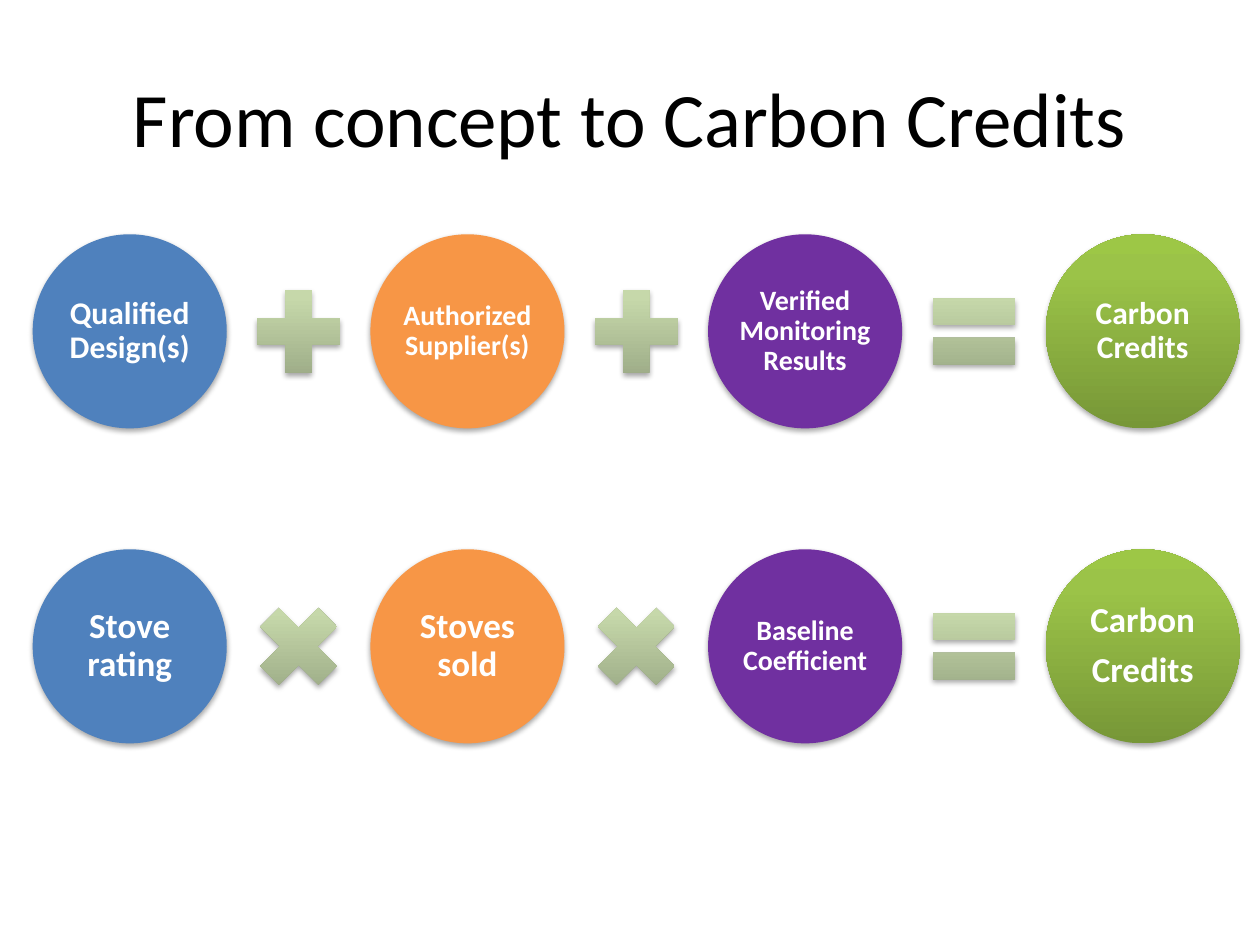
from copy import deepcopy
from lxml import etree
from pptx import Presentation, util as u
from pptx.dml.color import RGBColor
from pptx.enum import shapes, text
from pptx.oxml.ns import qn

SHAPE = shapes.MSO_SHAPE
PLUS, TIMES, EQUAL = SHAPE.MATH_PLUS, SHAPE.MATH_MULTIPLY, SHAPE.MATH_EQUAL

TITLE = "From concept to Carbon Credits"
EQUATIONS = [
    ([("Qualified Design(s)", 18), ("Authorized Supplier(s)", 16),
      ("Verified Monitoring Results", 16), ("Carbon Credits", 18)],
     [PLUS, PLUS, EQUAL]),
    ([("Stove rating", 20), ("Stoves sold", 20),
      ("Baseline Coefficient", 16), ("Carbon\nCredits", 20)],
     [TIMES, TIMES, EQUAL]),
]

THEME = {
    "font": "Calibri",
    "title_size": 44,
    "title": "000000",
    "label": "FFFFFF",
    "terms": ["4F81BD", "F79646", "7030A0",
              [(0, "779737"), (0.8, "9BC348"), (1, "9DC746")]],
    "operator": [(0, "98A683"), (0.8, "C6D8AA"), (1, "C7DAAA")],
    "shadow": {"blurRad": "40000", "dist": "23000", "dir": "5400000", "rotWithShape": "0"},
    "shadow_color": "000000",
    "shadow_alpha": "35000",
}

WIDTH, HEIGHT = 10, 7.5
FIRST_X, COLUMN = 1.03, 2.68
FIRST_Y, ROW = 2.63, HEIGHT / 3
CIRCLE, OPERATOR = 1.54, 0.89


def paint(sp, fill):
    if isinstance(fill, str):
        sp.fill.solid()
        sp.fill.fore_color.rgb = RGBColor.from_string(fill)
        return
    sp.fill.gradient()
    sp.fill.gradient_angle = 90
    stops = sp._element.spPr.find(".//" + qn("a:gsLst"))
    stops.append(deepcopy(stops[-1]))
    for stop, (position, color) in zip(sp.fill.gradient_stops, fill):
        stop.position = position
        stop.color.rgb = RGBColor.from_string(color)


def cast_shadow(sp):
    sp.shadow.inherit = False
    effects = sp._element.spPr.find(qn("a:effectLst"))
    shadow = etree.SubElement(effects, qn("a:outerShdw"), THEME["shadow"])
    color = etree.SubElement(shadow, qn("a:srgbClr"), val=THEME["shadow_color"])
    etree.SubElement(color, qn("a:alpha"), val=THEME["shadow_alpha"])


def add_centred(group, kind, x, y, size, fill):
    sp = group.shapes.add_shape(kind, u.Inches(x - size / 2), u.Inches(y - size / 2),
                                u.Inches(size), u.Inches(size))
    paint(sp, fill)
    sp.line.fill.background()
    cast_shadow(sp)
    return sp


def write(tf, content, size, color, bold=False):
    tf.text = content
    tf.word_wrap = True
    tf.vertical_anchor = text.MSO_ANCHOR.MIDDLE
    for p in tf.paragraphs:
        p.alignment = text.PP_ALIGN.CENTER
        for r in p.runs:
            r.font.name = THEME["font"]
            r.font.size = u.Pt(size)
            r.font.bold = bold
            r.font.color.rgb = RGBColor.from_string(color)


def add_term(group, x, y, label, size, fill):
    tf = add_centred(group, SHAPE.OVAL, x, y, CIRCLE, fill).text_frame
    write(tf, label, size, THEME["label"], bold=True)
    inset = u.Inches(0.02 if size < 18 else 0.03)
    tf.margin_left = tf.margin_right = tf.margin_top = tf.margin_bottom = inset
    for p in tf.paragraphs:
        p.line_spacing = 0.9
        p.space_after = u.Pt(0.35 * size)


def main():
    prs = Presentation()
    prs.slide_width, prs.slide_height = u.Inches(WIDTH), u.Inches(HEIGHT)
    s = prs.slides.add_slide(prs.slide_layouts[6])

    title = s.shapes.add_textbox(u.Inches(0.05 * WIDTH), u.Inches(0.04 * HEIGHT),
                                 u.Inches(0.9 * WIDTH), u.Inches(HEIGHT / 6))
    write(title.text_frame, TITLE, THEME["title_size"], THEME["title"])

    for row, (terms, operators) in enumerate(EQUATIONS):
        group = s.shapes.add_group_shape()
        y = FIRST_Y + row * ROW
        for col, ((label, size), fill) in enumerate(zip(terms, THEME["terms"])):
            add_term(group, FIRST_X + col * COLUMN, y, label, size, fill)
        for col, kind in enumerate(operators):
            add_centred(group, kind, FIRST_X + (col + 0.5) * COLUMN, y,
                        OPERATOR, THEME["operator"])

    prs.save("out.pptx")


if __name__ == "__main__":
    main()
